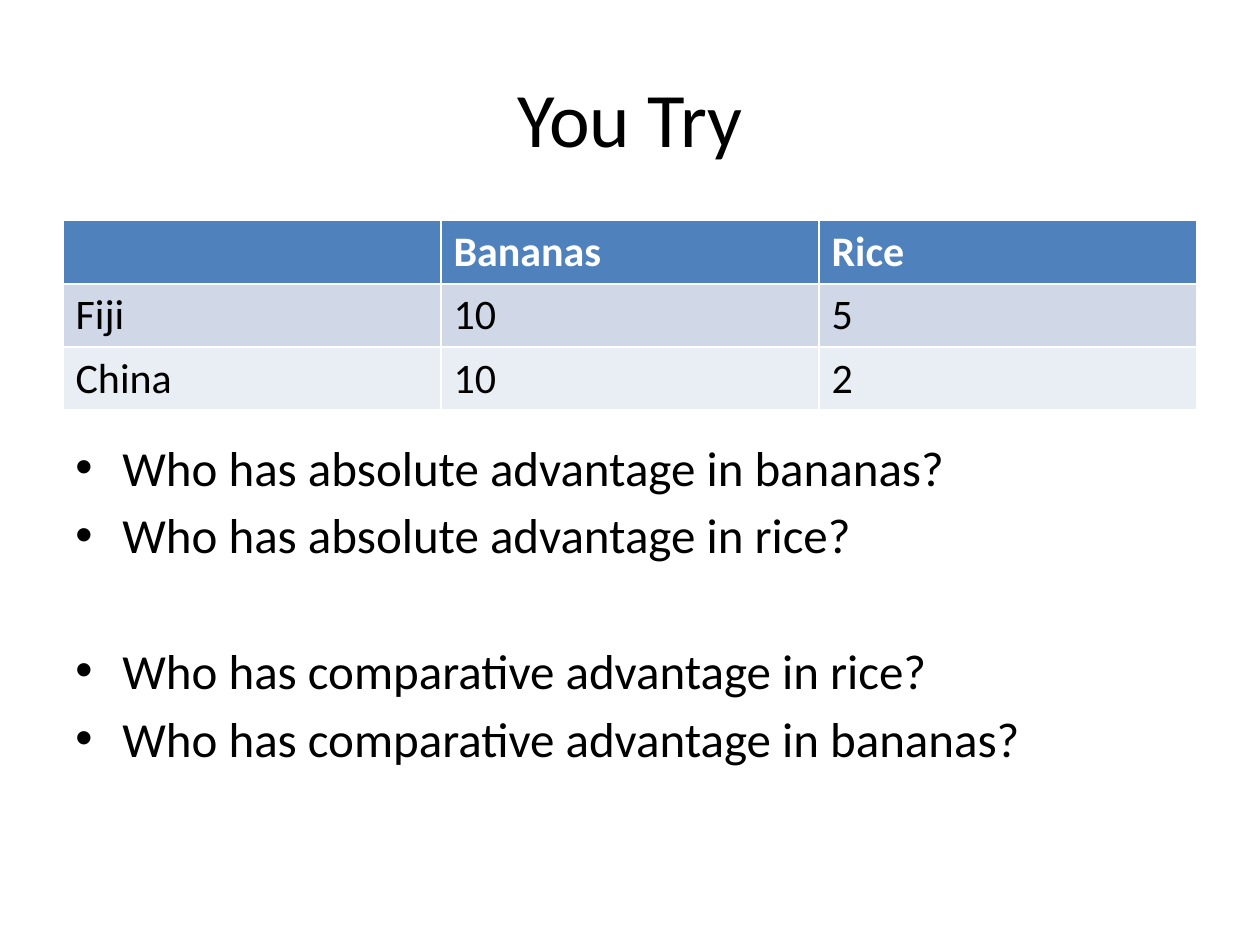
from lxml import etree
from pptx import Presentation
from pptx import util as u
from pptx.dml.color import RGBColor
from pptx.enum import text as t
from pptx.oxml.ns import qn

BLACK = RGBColor(0, 0, 0)
WHITE = RGBColor(255, 255, 255)
BLUE = RGBColor(0x4F, 0x81, 0xBD)
BANDS = RGBColor(0xD0, 0xD8, 0xE8), RGBColor(0xE9, 0xED, 0xF4)
FONT = "Calibri"

LEFT, WIDTH = u.Cm(1.27), u.Cm(22.86)
ROWS = [
    ("", "Bananas", "Rice"),
    ("Fiji", "10", "5"),
    ("China", "10", "2"),
]
GROUPS = [
    ("Who has absolute advantage in bananas?",
     "Who has absolute advantage in rice?"),
    ("Who has comparative advantage in rice?",
     "Who has comparative advantage in bananas?"),
]


def style(para, size, color=BLACK, bold=False):
    font = para.font
    font.name, font.size, font.bold = FONT, u.Pt(size), bold
    font.color.rgb = color


def add_frame(slide, box):
    frame = slide.shapes.add_textbox(*box).text_frame
    frame.word_wrap = True
    return frame


def add_title(slide, box, words):
    frame = add_frame(slide, box)
    frame.vertical_anchor = t.MSO_ANCHOR.MIDDLE
    para = frame.paragraphs[0]
    para.text = words
    para.alignment = t.PP_ALIGN.CENTER
    style(para, 44)


def add_grid(slide, box, rows):
    """Add a table with a blue header; its white rules come from the default style."""
    grid = slide.shapes.add_table(len(rows), len(rows[0]), *box).table
    for r, row in enumerate(rows):
        head = r == 0
        for c, words in enumerate(row):
            cell = grid.cell(r, c)
            cell.text = words
            cell.fill.solid()
            cell.fill.fore_color.rgb = BLUE if head else BANDS[(r - 1) % 2]
            style(cell.text_frame.paragraphs[0], 24, WHITE if head else BLACK, head)


def add_bullet(para):
    props = para._p.get_or_add_pPr()
    indent = u.Cm(0.95)
    props.set("marL", str(indent))
    props.set("indent", str(-indent))
    etree.SubElement(props, qn("a:buFont")).set("typeface", "Arial")
    etree.SubElement(props, qn("a:buChar")).set("char", "•")


def add_list(slide, box, groups):
    """Add bulleted questions, with one line of space between groups."""
    frame = add_frame(slide, box)
    for g, group in enumerate(groups):
        for i, words in enumerate(group):
            first = g == i == 0
            para = frame.paragraphs[0] if first else frame.add_paragraph()
            para.text = words
            para.space_before = u.Pt(44 if g and i == 0 else 5)
            style(para, 28)
            add_bullet(para)


def main():
    deck = Presentation()
    deck.slide_width, deck.slide_height = u.Cm(25.4), u.Cm(19.05)
    slide = deck.slides.add_slide(deck.slide_layouts[6])
    add_title(slide, (LEFT, u.Cm(0.76), WIDTH, u.Cm(3.18)), "You Try")
    add_grid(slide, (LEFT, u.Cm(4.45), WIDTH, u.Cm(3.81)), ROWS)
    add_list(slide, (LEFT, u.Cm(8.69), WIDTH, u.Cm(8.05)), GROUPS)
    deck.save("out.pptx")


if __name__ == "__main__":
    main()
